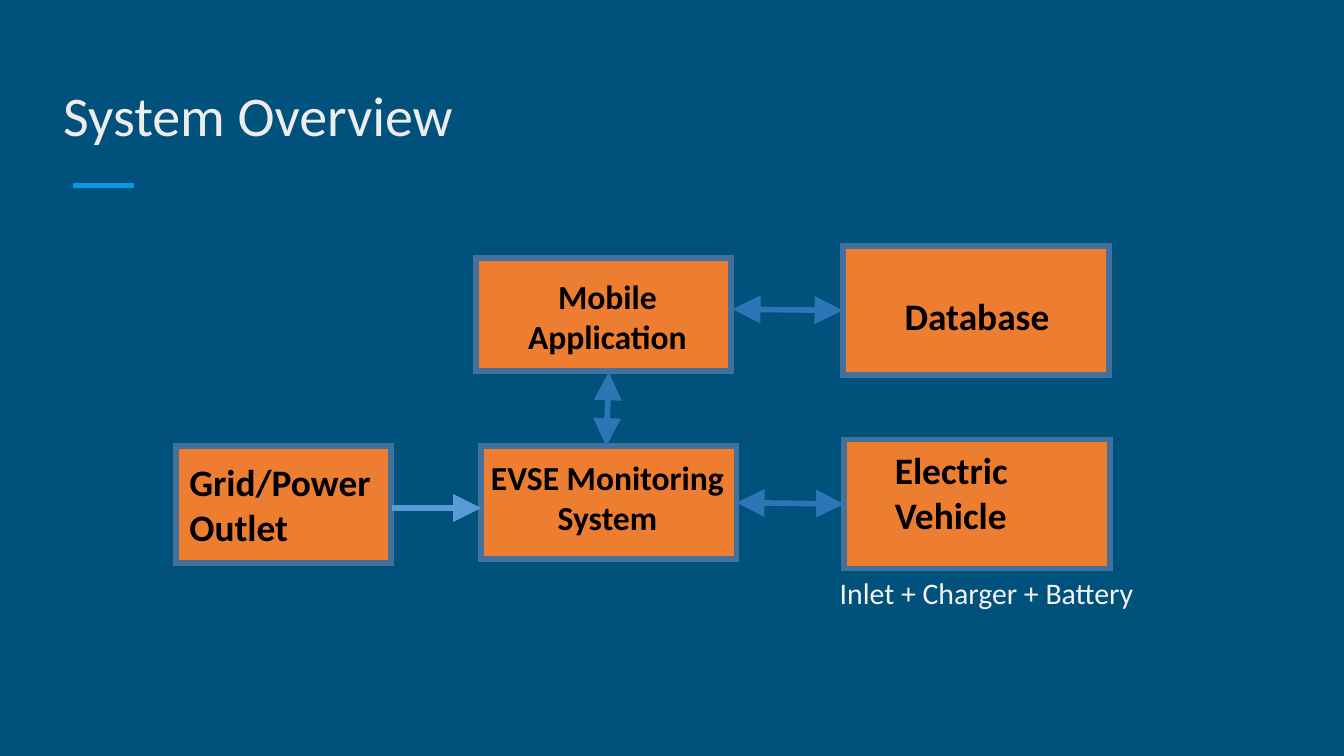
from lxml.etree import SubElement
from pptx import Presentation
from pptx.dml.color import RGBColor
from pptx.enum.shapes import MSO_CONNECTOR as Conn, MSO_SHAPE as Shape
from pptx.enum.text import MSO_ANCHOR as Anchor, MSO_AUTO_SIZE as Fit, PP_ALIGN as Align
from pptx.oxml.ns import qn
from pptx.util import Inches, Pt


def rgb(code):
    return RGBColor.from_string(code)


def write(frame, text, size, color, bold=False, align=Align.LEFT):
    frame.word_wrap = True
    frame.auto_size = Fit.NONE
    para = frame.paragraphs[0]
    para.alignment = align
    run = para.add_run()
    run.text = text
    font = run.font
    font.name, font.size, font.bold = "Calibri", Pt(size), bold
    font.color.rgb = rgb(color)
    return para


prs = Presentation()
prs.slide_width = Inches(10)
prs.slide_height = Inches(10) * 9 // 16
slide = prs.slides.add_slide(prs.slide_layouts[5])
slide.background.fill.solid()
slide.background.fill.fore_color.rgb = rgb("00517C")
shapes = slide.shapes

# Title
title = shapes.title
title.left, title.top = Inches(0.37), Inches(0.4)
title.width, title.height = Inches(8.39), Inches(0.96)
title.text_frame.vertical_anchor = Anchor.MIDDLE
write(title.text_frame, "System Overview", 30, "EDEDED").line_spacing = 0.9

# Boxes: left, top, width, height
places = {
    "grid": (1.31, 3.32, 1.6, 0.87),
    "evse": (3.58, 3.32, 1.9, 0.84),
    "car": (6.28, 3.27, 1.98, 0.96),
    "app": (3.54, 1.92, 1.9, 0.84),
    "data": (6.27, 1.83, 1.98, 0.96),
}
boxes = {}
for name, place in places.items():
    box = shapes.add_shape(Shape.RECTANGLE, *map(Inches, place))
    box.shadow.inherit = False
    box.fill.solid()
    box.fill.fore_color.rgb = rgb("ED7D31")
    box.line.color.rgb = rgb("42719B")
    box.line.width = Pt(3)
    SubElement(box.element.spPr.find(qn("a:ln")), qn("a:miter"), lim="800000")
    boxes[name] = box

# Title rule and arrows: ends, joined boxes, colour, arrowheads
LEFT, RIGHT = 1, 3
both = ("headEnd", "tailEnd")
links = [
    ((0.54, 1.38, 1, 1.38), None, None, "039BE5", ()),
    ((2.92, 3.78, 3.58, 3.78), None, None, "5B9BD5", ("tailEnd",)),
    ((5.48, 3.74, 6.28, 3.75), "evse", "car", "2E75B5", both),
    ((4.51, 3.32, 4.53, 2.77), None, None, "2E75B5", both),
    ((5.45, 2.3, 6.26, 2.31), None, "data", "2E75B5", both),
]
for ends, start, end, color, heads in links:
    line = shapes.add_connector(Conn.STRAIGHT, *map(Inches, ends))
    if start:
        line.begin_connect(boxes[start], RIGHT)
    if end:
        line.end_connect(boxes[end], LEFT)
    line.line.color.rgb = rgb(color)
    line.line.width = Pt(3)
    props = line.element.spPr
    for head in heads:
        SubElement(props.find(qn("a:ln")), qn("a:" + head), type="triangle", w="lg", len="lg")
    SubElement(props, qn("a:effectLst"))

# Labels: text, place, size, colour, bold, alignment
labels = [
    ("Grid/Power Outlet", (1.31, 3.37, 1.75, 0.84), 20, "000000", True, Align.LEFT),
    ("EVSE Monitoring System", (3.53, 3.35, 1.98, 0.87), 18, "000000", True, Align.CENTER),
    ("Mobile Application", (3.72, 2, 1.6, 0.38), 18, "000000", True, Align.CENTER),
    ("Electric Vehicle", (6.56, 3.28, 1.43, 0.41), 20, "000000", True, Align.LEFT),
    ("Inlet + Charger + Battery", (6.15, 4.23, 2.76, 0.47), 16, "F3F3F3", False, Align.LEFT),
    ("Database", (6.47, 2.13, 1.6, 0.41), 20, "000000", True, Align.CENTER),
]
for text, place, *style in labels:
    label = shapes.add_textbox(*map(Inches, place))
    write(label.text_frame, text, *style)

prs.save("out.pptx")
